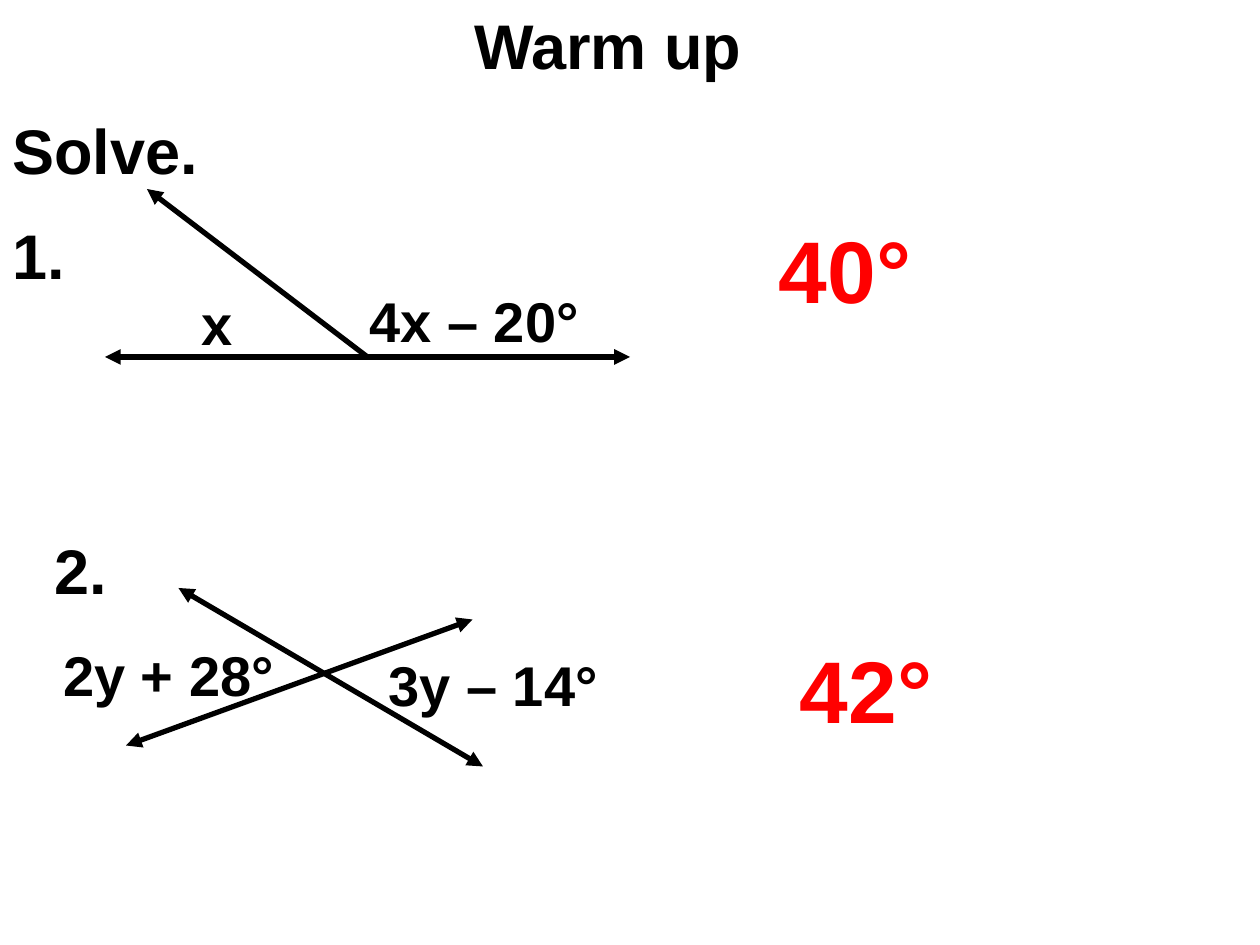
from lxml.etree import SubElement
from pptx import Presentation
from pptx.dml.color import RGBColor
from pptx.enum.shapes import MSO_CONNECTOR
from pptx.enum.text import MSO_AUTO_SIZE
from pptx.oxml.ns import qn
from pptx.util import Pt

COLORS = {"ink": "000000", "answer": "FF0000", "paper": "FFFFFF"}
FONT = "Arial"


def add_text(slide, text, x, y, w, h, size=36, color="ink", tight=False):
    sp = slide.shapes.add_textbox(Pt(x), Pt(y), Pt(w), Pt(h))
    tf = sp.text_frame
    tf.word_wrap = not tight
    tf.auto_size = MSO_AUTO_SIZE.SHAPE_TO_FIT_TEXT
    p = tf.paragraphs[0]
    if tight:
        tf.margin_left = tf.margin_top = tf.margin_right = tf.margin_bottom = 0
    else:
        before = SubElement(p._p.get_or_add_pPr(), qn("a:spcBef"))
        SubElement(before, qn("a:spcPct"), val="50000")
    r = p.add_run()
    r.text = text
    r.font.name = FONT
    r.font.size = Pt(size)
    r.font.bold = True
    r.font.color.rgb = RGBColor.from_string(COLORS[color])


def add_arrow(slide, x1, y1, x2, y2, both=True):
    line = slide.shapes.add_connector(
        MSO_CONNECTOR.STRAIGHT, Pt(x1), Pt(y1), Pt(x2), Pt(y2))
    line.line.width = Pt(3)
    line.line.color.rgb = RGBColor.from_string(COLORS["ink"])
    ln = line.line._get_or_add_ln()
    for end in ("a:headEnd", "a:tailEnd") if both else ("a:tailEnd",):
        SubElement(ln, qn(end), type="triangle")
    SubElement(line._element.spPr, qn("a:effectLst"))


def add_answer(slide, text, x, y):
    add_text(slide, text, x, y, 180, 67, 50, "answer")


def add_heading(slide, x, y):
    add_text(slide, "Warm up", x + 264, y, 234, 50.4)
    add_text(slide, "Solve.", x, y + 60, 234, 50.4)


def add_linear_pair(slide, x, y):
    add_text(slide, "1.", x, y, 78, 50.4)
    add_arrow(slide, x + 60, y + 84, x + 360, y + 84)
    add_arrow(slide, x + 210, y + 84, x + 84, y - 12, both=False)
    add_text(slide, "x", x + 108, y + 42, 90, 45.4, 32)
    add_text(slide, "4x – 20°", x + 204, y + 40, 168, 45.4, 32)
    add_answer(slide, "40°", x + 438, y)


def add_vertical_angles(slide, x, y):
    add_text(slide, "2.", x, y, 78, 50.4)
    add_text(slide, "2y + 28°", x + 12, y + 66, 121.7, 38.9, 32, tight=True)
    add_text(slide, "3y – 14°", x + 198, y + 72, 120.2, 38.9, 32, tight=True)
    add_arrow(slide, x + 246, y + 54, x + 48, y + 126)
    add_arrow(slide, x + 252, y + 138, x + 78, y + 36)
    add_answer(slide, "42°", x + 426, y + 60)


def main():
    prs = Presentation()
    prs.slide_width, prs.slide_height = Pt(720), Pt(540)
    slide = prs.slides.add_slide(prs.slide_layouts[6])
    fill = slide.background.fill
    fill.solid()
    fill.fore_color.rgb = RGBColor.from_string(COLORS["paper"])
    add_heading(slide, 0, 0)
    add_linear_pair(slide, 0, 120)
    add_vertical_angles(slide, 24, 300)
    prs.save("out.pptx")


if __name__ == "__main__":
    main()
